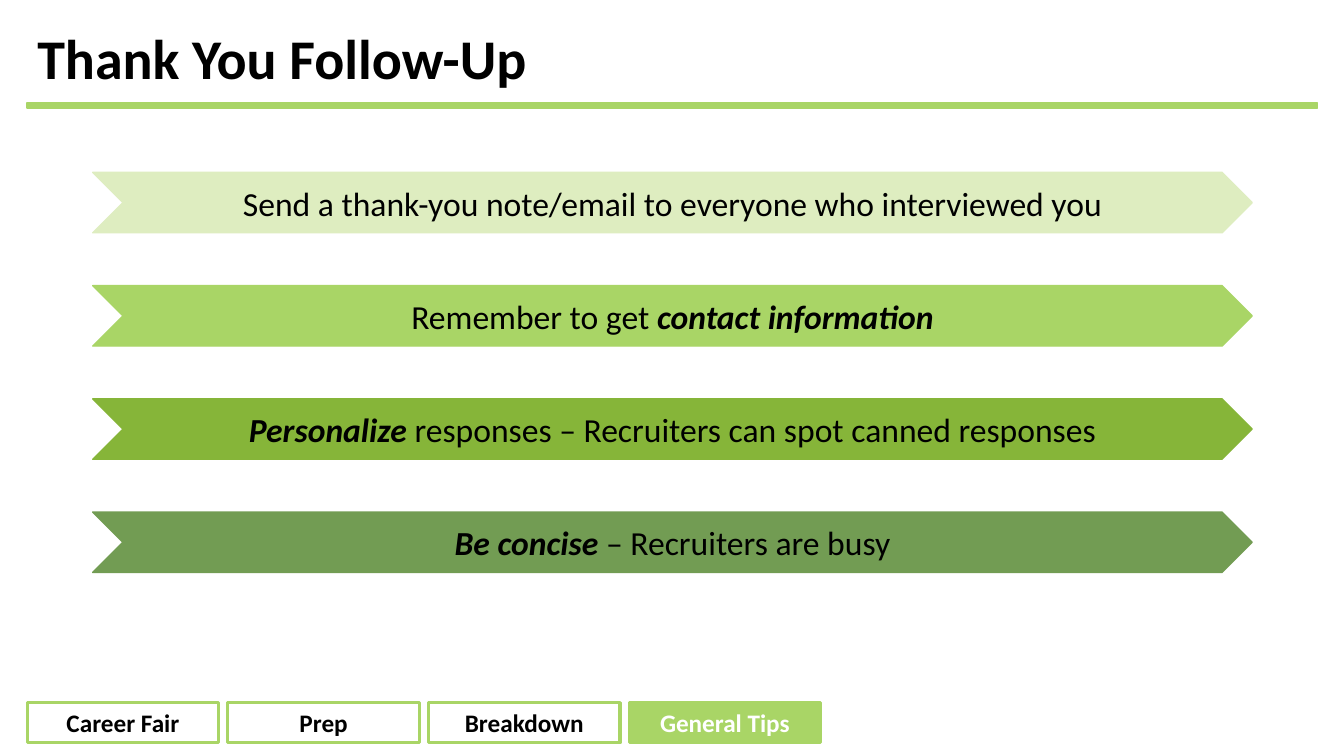
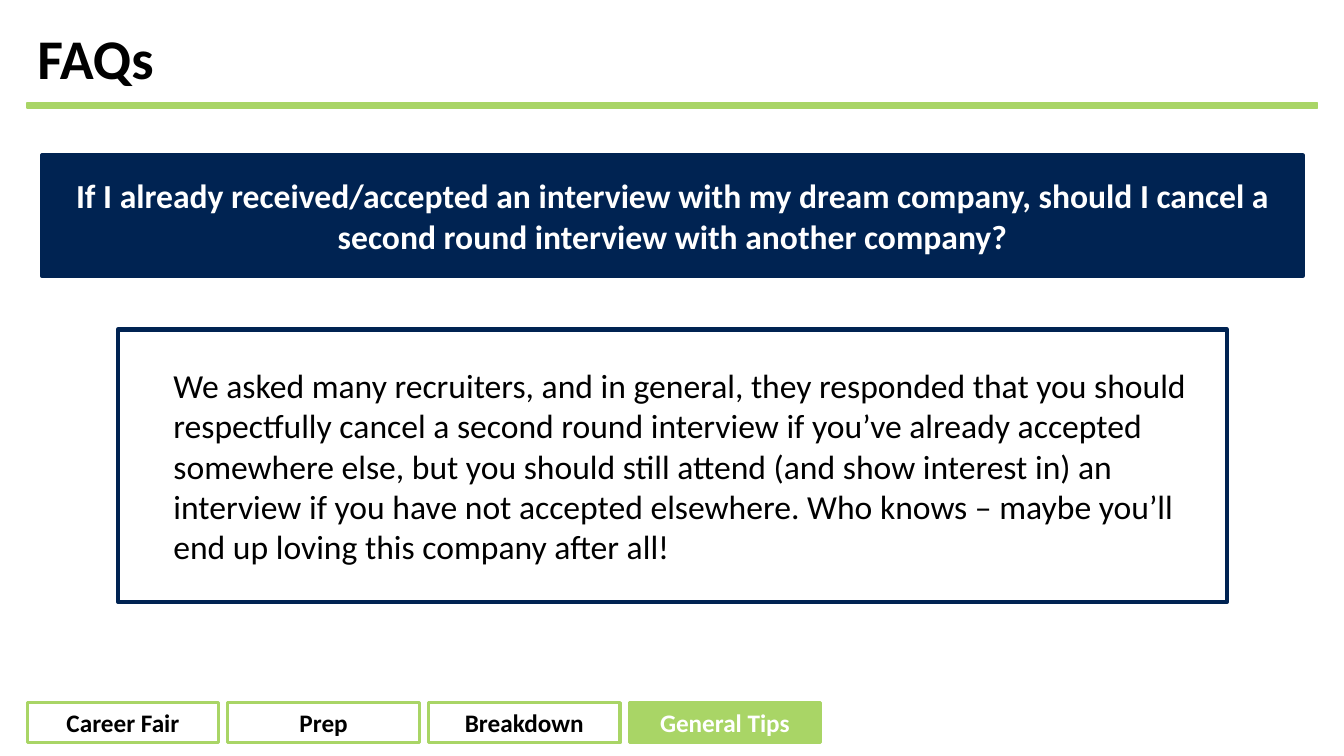
from pptx import Presentation
from pptx.dml.color import RGBColor
from pptx.enum.shapes import MSO_SHAPE
from pptx.enum.text import MSO_ANCHOR, PP_ALIGN
from pptx.util import Inches, Pt

BLACK = RGBColor(0x00, 0x00, 0x00)
WHITE = RGBColor(0xFF, 0xFF, 0xFF)
NAVY = RGBColor(0x00, 0x23, 0x52)
LIME = RGBColor(0xA9, 0xD5, 0x66)
PALE = RGBColor(0xDE, 0xED, 0xC0)
LEAF = RGBColor(0x86, 0xB5, 0x39)
MOSS = RGBColor(0x72, 0x9C, 0x53)

FACE = "Calibri"
TABS = ["Career Fair", "Prep", "Breakdown", "General Tips"]
HEAD = (0.27, 0.19, 12.8, 0.83)
FOOT = (0.27, 6.97, 7.87, 0.4)

# Each tip: fill colour and runs of (text, stressed)
TIPS = [
    (PALE, [("Send a thank-you note/email to everyone who interviewed you", False)]),
    (LIME, [("Remember to get ", False), ("contact information", True)]),
    (LEAF, [("Personalize", True),
            (" responses – Recruiters can spot canned responses", False)]),
    (MOSS, [("Be concise", True), (" – Recruiters are busy", False)]),
]
ASK = ("If I already received/accepted an interview with my dream company, "
       "should I cancel a second round interview with another company?")
REPLY = ("We asked many recruiters, and in general, they responded that you should "
         "respectfully cancel a second round interview if you’ve already accepted "
         "somewhere else, but you should still attend (and show interest in) an "
         "interview if you have not accepted elsewhere. Who knows – maybe you’ll "
         "end up loving this company after all!")


def style(item, **values):
    """Set each named attribute of an item."""
    for name, value in values.items():
        setattr(item, name, value)


def write(para, text, size, color, **looks):
    """Add one run of text to a paragraph."""
    run = para.add_run()
    run.text = text
    style(run.font, name=FACE, size=Pt(size), **looks)
    run.font.color.rgb = color


def panel(slide, box, fill, edge, width, kind=MSO_SHAPE.RECTANGLE, pad=None):
    """Draw a filled shape and return it, ready for centred text."""
    shape = slide.shapes.add_shape(kind, *map(Inches, box))
    shape.shadow.inherit = False
    shape.fill.solid()
    shape.fill.fore_color.rgb = fill
    shape.line.color.rgb = edge
    shape.line.width = Pt(width)
    frame = shape.text_frame
    style(frame, word_wrap=True, vertical_anchor=MSO_ANCHOR.MIDDLE)
    if pad is not None:
        for side in ("left", "top", "right", "bottom"):
            setattr(frame, "margin_" + side, Inches(pad))
    frame.paragraphs[0].alignment = PP_ALIGN.CENTER
    return shape


def header(slide, box, text):
    """Title with a green rule along its lower edge."""
    left, top, width, height = box
    panel(slide, (left, top + height, width, 0.05), LIME, LIME, 1)
    title = slide.shapes.title
    style(title, **dict(zip(("left", "top", "width", "height"), map(Inches, box))))
    title.text_frame.vertical_anchor = MSO_ANCHOR.MIDDLE
    para = title.text_frame.paragraphs[0]
    style(para, alignment=PP_ALIGN.LEFT, line_spacing=0.9)
    write(para, text, 40, BLACK, bold=True)


def footer(slide, box, active):
    """Row of section tabs, with the active one filled."""
    left, top, width, height = box
    gap = 0.09
    wide = (width - gap * (len(TABS) - 1)) / len(TABS)
    for i, name in enumerate(TABS):
        fill, ink = (LIME, WHITE) if name == active else (WHITE, BLACK)
        tab = panel(slide, (left + i * (wide + gap), top, wide, height), fill, LIME, 2.25)
        write(tab.text_frame.paragraphs[0], name, 18, ink, bold=True)


def start(deck, title):
    """Add a slide with the shared header and footer."""
    slide = deck.slides.add_slide(deck.slide_layouts[5])
    header(slide, HEAD, title)
    footer(slide, FOOT, "General Tips")
    return slide


def tips(slide, box):
    """Stack of chevrons spread evenly over the box."""
    left, top, width, height = box
    tall = 0.6
    step = (height - tall) / (len(TIPS) - 1)
    for i, (fill, runs) in enumerate(TIPS):
        bar = panel(slide, (left, top + i * step, width, tall), fill, fill, 1,
                    MSO_SHAPE.CHEVRON)
        for text, stress in runs:
            write(bar.text_frame.paragraphs[0], text, 24, BLACK,
                  bold=stress, italic=stress)


def faq(slide, box):
    """Question band above an inset answer frame."""
    left, top, width, height = box
    inset, band, drop = 0.75, 1.2, 1.73
    ask = panel(slide, (left, top, width, band), NAVY, NAVY, 3, pad=0.05)
    write(ask.text_frame.paragraphs[0], ASK, 24, WHITE, bold=True)
    area = (left + inset, top + drop, width - 2 * inset, height - drop)
    reply = panel(slide, area, WHITE, NAVY, 3, pad=0.05)
    para = reply.text_frame.paragraphs[0]
    style(para, alignment=PP_ALIGN.LEFT, level=1)
    # Left indent of the answer
    props = para._p.get_or_add_pPr()
    props.set("marL", str(Inches(0.5)))
    props.set("indent", "0")
    write(para, REPLY, 24, BLACK)


def main():
    deck = Presentation()
    style(deck, slide_width=Inches(13.33), slide_height=Inches(7.5))
    tips(start(deck, "Thank You Follow-Up"), (0.92, 1.71, 11.5, 3.97))
    faq(start(deck, "FAQs"), (0.42, 1.54, 12.5, 4.43))
    deck.save("out.pptx")


if __name__ == "__main__":
    main()
